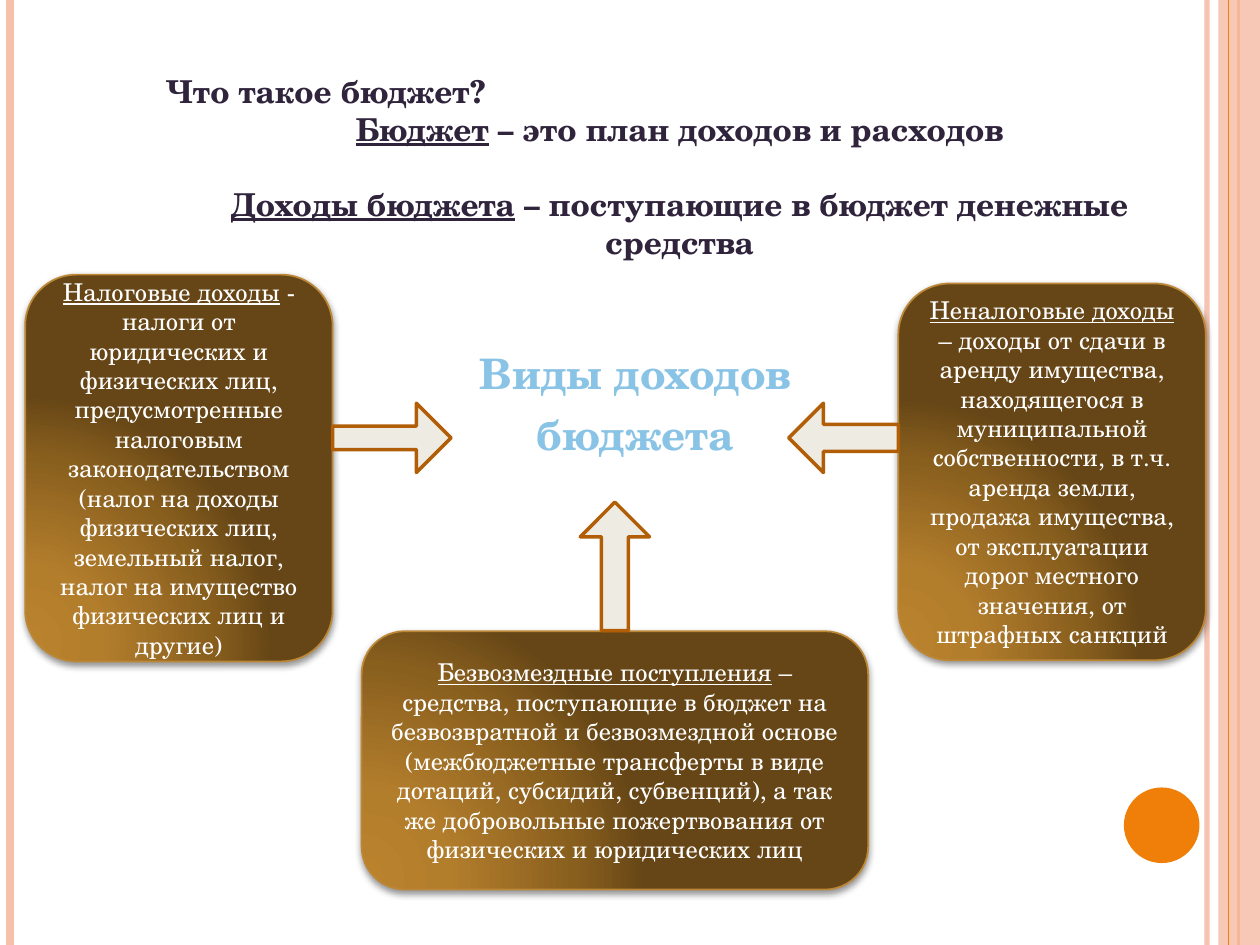
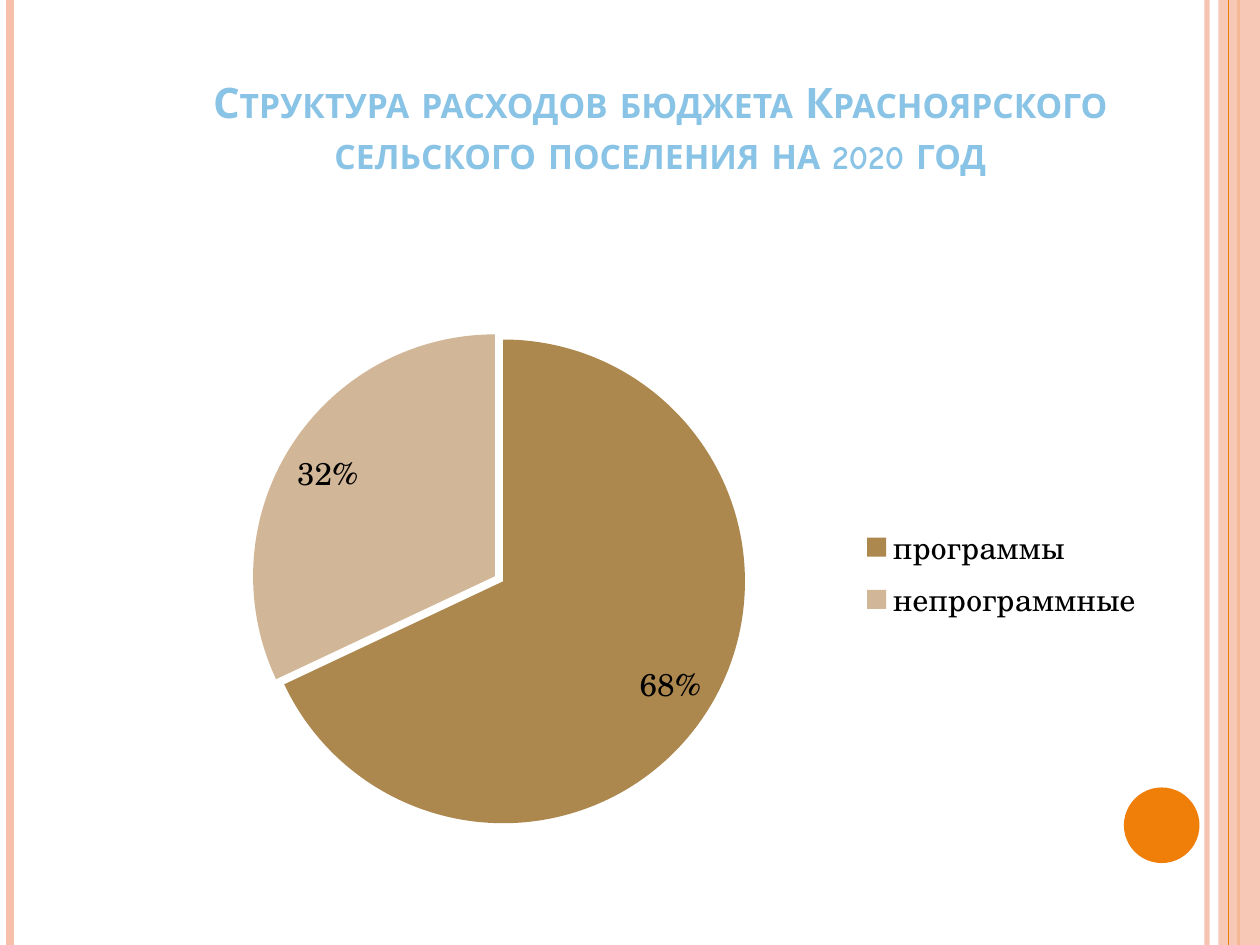
from dataclasses import dataclass

from pptx import Presentation
from pptx.chart.data import CategoryChartData
from pptx.dml.color import RGBColor
from pptx.enum import chart as chart_enum, shapes, text
from pptx.oxml import parse_xml
from pptx.oxml.ns import nsdecls, qn
from pptx.util import Inches, Pt

SERIF, COMIC = "TeX Gyre Schola", "Comic Neue"
PEACH = RGBColor(0xF6, 0xC0, 0xAB)
ORANGE = RGBColor(0xF0, 0x7F, 0x09)
SKY = RGBColor(0x89, 0xC3, 0xE5)
PLUM = RGBColor(0x30, 0x24, 0x3C)
WHITE = RGBColor(0xFF, 0xFF, 0xFF)
BLACK = RGBColor(0, 0, 0)
GOLD = RGBColor(0xBC, 0x87, 0x36)
IVORY = RGBColor(0xEE, 0xEB, 0xE3)
RUST = RGBColor(0xB2, 0x5E, 0x07)
BRONZE = RGBColor(0xAC, 0x87, 0x4E)
SAND = RGBColor(0xD2, 0xB6, 0x98)
CARD_STOPS = {0: "BA822D", 30: "B37E2C", 75: "895F1E", 100: "664616"}

HEADING = {"name": SERIF, "size": Pt(24), "bold": True}
DEFINITION = {"name": SERIF, "size": Pt(18), "bold": True}
CARD_TEXT = {"name": SERIF, "size": Pt(14)}
CENTER = text.PP_ALIGN.CENTER


@dataclass(frozen=True)
class Box:
    left: float
    top: float
    width: float
    height: float

    def lengths(self) -> list:
        return [Inches(n) for n in (self.left, self.top, self.width, self.height)]


@dataclass(frozen=True)
class Stripe:
    x: float
    color: RGBColor
    width: float
    opacity: int = 100


@dataclass(frozen=True)
class Card:
    box: Box
    term: str
    meaning: str


@dataclass(frozen=True)
class Arrow:
    box: Box
    rotation: int
    thickness: float


STRIPES = [Stripe(9.58, PEACH, 3, 93), Stripe(0.08, PEACH, 4.5), Stripe(9.83, ORANGE, 1.5)]
BAND_STRIPE = Stripe(9.75, ORANGE, 0.75)
CARDS = [
    Card(Box(7.13, 2.25, 2.44, 2.99), "Неналоговые доходы",
         " – доходы от сдачи в аренду имущества, находящегося в муниципальной "
         "собственности, в т.ч. аренда земли, продажа имущества, от эксплуатации "
         "дорог местного значения, от штрафных санкций"),
    Card(Box(0.2, 2.18, 2.44, 3.07), "Налоговые доходы",
         " - налоги от юридических и физических лиц, предусмотренные налоговым "
         "законодательством (налог на доходы физических лиц, земельный налог, "
         "налог на имущество физических лиц и другие)"),
    Card(Box(2.87, 5.01, 4.02, 2.05), "Безвозмездные поступления",
         " – средства, поступающие в бюджет на безвозвратной и безвозмездной "
         "основе (межбюджетные трансферты в виде дотаций, субсидий, субвенций), "
         "а так же добровольные пожертвования от физических и юридических лиц"),
]
ARROWS = [
    Arrow(Box(6.26, 3.2, 0.87, 0.55), 180, 0.39),
    Arrow(Box(2.64, 3.2, 0.94, 0.55), 0, 0.34),
    Arrow(Box(4.37, 4.22, 1.02, 0.55), 270, 0.39),
]


def set_opacity(shape, percent: int) -> None:
    if percent < 100:
        color = next(shape.element.spPr.iter(qn("a:srgbClr")))
        color.append(parse_xml(f'<a:alpha {nsdecls("a")} val="{percent * 1000}"/>'))


def add_run(paragraph, words: str, style: dict, color: RGBColor, **extra):
    run = paragraph.add_run()
    run.text = words
    for name, value in {**style, **extra}.items():
        setattr(run.font, name, value)
    run.font.color.rgb = color
    return run


def add_term(paragraph, term: str, meaning: str, style: dict, color: RGBColor) -> None:
    """Write an underlined term and its meaning, centred."""
    paragraph.alignment = CENTER
    add_run(paragraph, term, style, color, underline=True)
    add_run(paragraph, meaning, style, color)


def add_solid(slide, kind, box: Box, fill: RGBColor, opacity: int = 100):
    shape = slide.shapes.add_shape(kind, *box.lengths())
    shape.shadow.inherit = False
    shape.fill.solid()
    shape.fill.fore_color.rgb = fill
    set_opacity(shape, opacity)
    shape.line.fill.background()
    return shape


def outline(shape, color: RGBColor, width: float) -> None:
    shape.line.color.rgb = color
    shape.line.width = Pt(width)


def add_stripe(slide, stripe: Stripe) -> None:
    x = Inches(stripe.x)
    line = slide.shapes.add_connector(
        shapes.MSO_CONNECTOR.STRAIGHT, x, Inches(0), x, Inches(7.5))
    outline(line, stripe.color, stripe.width)
    set_opacity(line, stripe.opacity)
    line.element.spPr.append(parse_xml(f'<a:effectLst {nsdecls("a")}/>'))


def add_decor(slide) -> None:
    """Draw the side stripes, right band and disc shared by the slides."""
    for stripe in STRIPES:
        add_stripe(slide, stripe)
    add_solid(slide, shapes.MSO_SHAPE.RECTANGLE, Box(9.67, 0, 0.33, 7.5), PEACH, 87)
    add_stripe(slide, BAND_STRIPE)
    add_solid(slide, shapes.MSO_SHAPE.OVAL, Box(8.92, 6.25, 0.6, 0.6), ORANGE)


def add_text_frame(slide, box: Box):
    frame = slide.shapes.add_textbox(*box.lengths()).text_frame
    frame.word_wrap = True
    return frame


def add_card(slide, card: Card) -> None:
    shape = add_solid(slide, shapes.MSO_SHAPE.ROUNDED_RECTANGLE, card.box, GOLD)
    outline(shape, GOLD, 1)
    stops = "".join(f'<a:gs pos="{position * 1000}"><a:srgbClr val="{color}"/></a:gs>'
                    for position, color in CARD_STOPS.items())
    properties = shape.element.spPr
    properties.replace(properties.find(qn("a:solidFill")), parse_xml(
        f'<a:gradFill {nsdecls("a")} rotWithShape="1"><a:gsLst>{stops}</a:gsLst>'
        '<a:path path="circle"><a:fillToRect l="5000" t="100000" r="120000" b="10000"/>'
        '</a:path></a:gradFill>'))
    properties.find(qn("a:effectLst")).append(parse_xml(
        f'<a:outerShdw {nsdecls("a")} blurRad="{Pt(4)}" dist="{Pt(1.6)}" dir="5400000" '
        'rotWithShape="0"><a:srgbClr val="000000"><a:alpha val="42000"/></a:srgbClr>'
        '</a:outerShdw>'))
    frame = shape.text_frame
    frame.word_wrap = True
    frame.vertical_anchor = text.MSO_ANCHOR.MIDDLE
    add_term(frame.paragraphs[0], card.term, card.meaning, CARD_TEXT, WHITE)


def add_arrow(slide, arrow: Arrow) -> None:
    shape = add_solid(slide, shapes.MSO_SHAPE.RIGHT_ARROW, arrow.box, IVORY)
    outline(shape, RUST, 2)
    shape.rotation = arrow.rotation
    shape.adjustments[0] = arrow.thickness
    shape.adjustments[1] = 0.5


def build_income_slide(presentation) -> None:
    slide = presentation.slides.add_slide(presentation.slide_layouts.get_by_name("Blank"))
    add_decor(slide)

    kinds = add_text_frame(slide, Box(0.28, 2.18, 9.53, 4.72))
    kinds.margin_top = Inches(0.58)
    first, second = kinds.paragraphs[0], kinds.add_paragraph()
    second.space_before = Pt(6)
    for paragraph, words in ((first, "Виды доходов"), (second, "бюджета")):
        paragraph.alignment = CENTER
        add_run(paragraph, words, HEADING, SKY)

    definitions = add_text_frame(slide, Box(1.22, 0.52, 8.35, 1.31))
    add_run(definitions.paragraphs[0], "Что такое бюджет?", DEFINITION, PLUM)
    add_term(definitions.add_paragraph(), "Бюджет", " – это план доходов и расходов",
             DEFINITION, PLUM)
    income = definitions.add_paragraph()
    income.space_before = Pt(21.6)
    add_term(income, "Доходы бюджета", " – поступающие в бюджет денежные средства",
             DEFINITION, PLUM)

    for card in CARDS:
        add_card(slide, card)
    for arrow in ARROWS:
        add_arrow(slide, arrow)


def format_title(title) -> None:
    title.left, title.top, title.width, title.height = Box(0.83, 0.44, 8.67, 1.02).lengths()
    frame = title.text_frame
    frame.auto_size = text.MSO_AUTO_SIZE.NONE
    frame.word_wrap = True
    frame.vertical_anchor = text.MSO_ANCHOR.BOTTOM
    frame.margin_left = Inches(0.25)
    paragraph = frame.paragraphs[0]
    paragraph.alignment = CENTER
    style = {**HEADING, "name": COMIC}
    add_run(paragraph, "Структура расходов бюджета Красноярского", style, SKY)
    paragraph.add_line_break()
    add_run(paragraph, "сельского поселения на 2020 год", style, SKY)
    for properties in title.element.iter(qn("a:rPr")):
        properties.set("cap", "small")


def add_spending_chart(slide) -> None:
    data = CategoryChartData(number_format="0%")
    data.categories = ["программы", "непрограммные"]
    data.add_series("Series 1", [0.68, 0.32])
    chart = slide.shapes.add_chart(chart_enum.XL_CHART_TYPE.PIE,
                                   *Box(0.91, 2.18, 8.27, 4.74).lengths(), data).chart
    chart.has_title = False
    chart.font.name = SERIF
    chart.font.size = Pt(18)
    chart.font.color.rgb = BLACK
    chart.has_legend = True
    chart.legend.position = chart_enum.XL_LEGEND_POSITION.RIGHT
    chart.legend.include_in_layout = False

    plot = chart.plots[0]
    plot.vary_by_categories = True
    plot.has_data_labels = True
    label_format = {"show_value": True, "show_percentage": False, "number_format": "0%",
                    "number_format_is_linked": False,
                    "position": chart_enum.XL_LABEL_POSITION.INSIDE_END}
    for name, value in label_format.items():
        setattr(plot.data_labels, name, value)
    for index, color in enumerate((BRONZE, SAND)):
        slice_format = plot.series[0].points[index].format
        slice_format.fill.solid()
        slice_format.fill.fore_color.rgb = color
        slice_format.line.fill.background()

    first_slice = next(chart.element.iter(qn("c:dPt")))
    first_slice.find(qn("c:spPr")).addprevious(
        parse_xml(f'<c:explosion {nsdecls("c")} val="4"/>'))
    place_plot(chart, Box(0.13, 0.1, 0.47, 0.81))


def place_plot(chart, share: Box) -> None:
    """Fix the inner plot area, given as shares of the chart's size."""
    area = next(chart.element.iter(qn("c:plotArea")))
    for layout in area.findall(qn("c:layout")):
        area.remove(layout)
    places = {"x": share.left, "y": share.top, "w": share.width, "h": share.height}
    modes = '<c:xMode val="edge"/><c:yMode val="edge"/>'
    values = "".join(f'<c:{name} val="{value}"/>' for name, value in places.items())
    area.insert(0, parse_xml(
        f'<c:layout {nsdecls("c")}><c:manualLayout><c:layoutTarget val="inner"/>'
        f'{modes}{values}</c:manualLayout></c:layout>'))


def build_spending_slide(presentation) -> None:
    layout = presentation.slide_layouts.get_by_name("Title Only")
    slide = presentation.slides.add_slide(layout)
    add_decor(slide)
    format_title(slide.shapes.title)
    add_spending_chart(slide)


def main() -> None:
    presentation = Presentation()
    presentation.slide_width, presentation.slide_height = Inches(10), Inches(7.5)
    build_income_slide(presentation)
    build_spending_slide(presentation)
    presentation.save("out.pptx")


if __name__ == "__main__":
    main()
